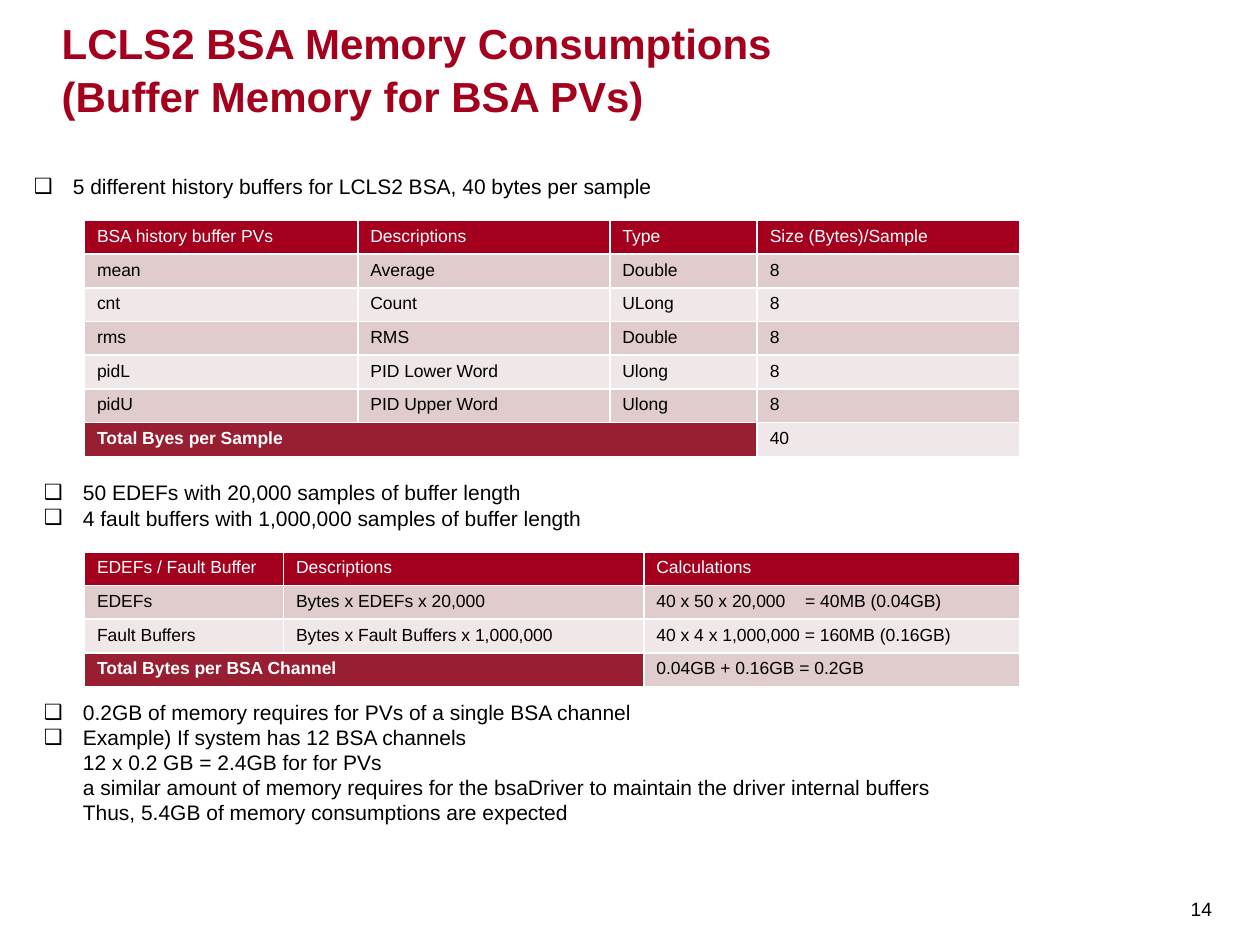
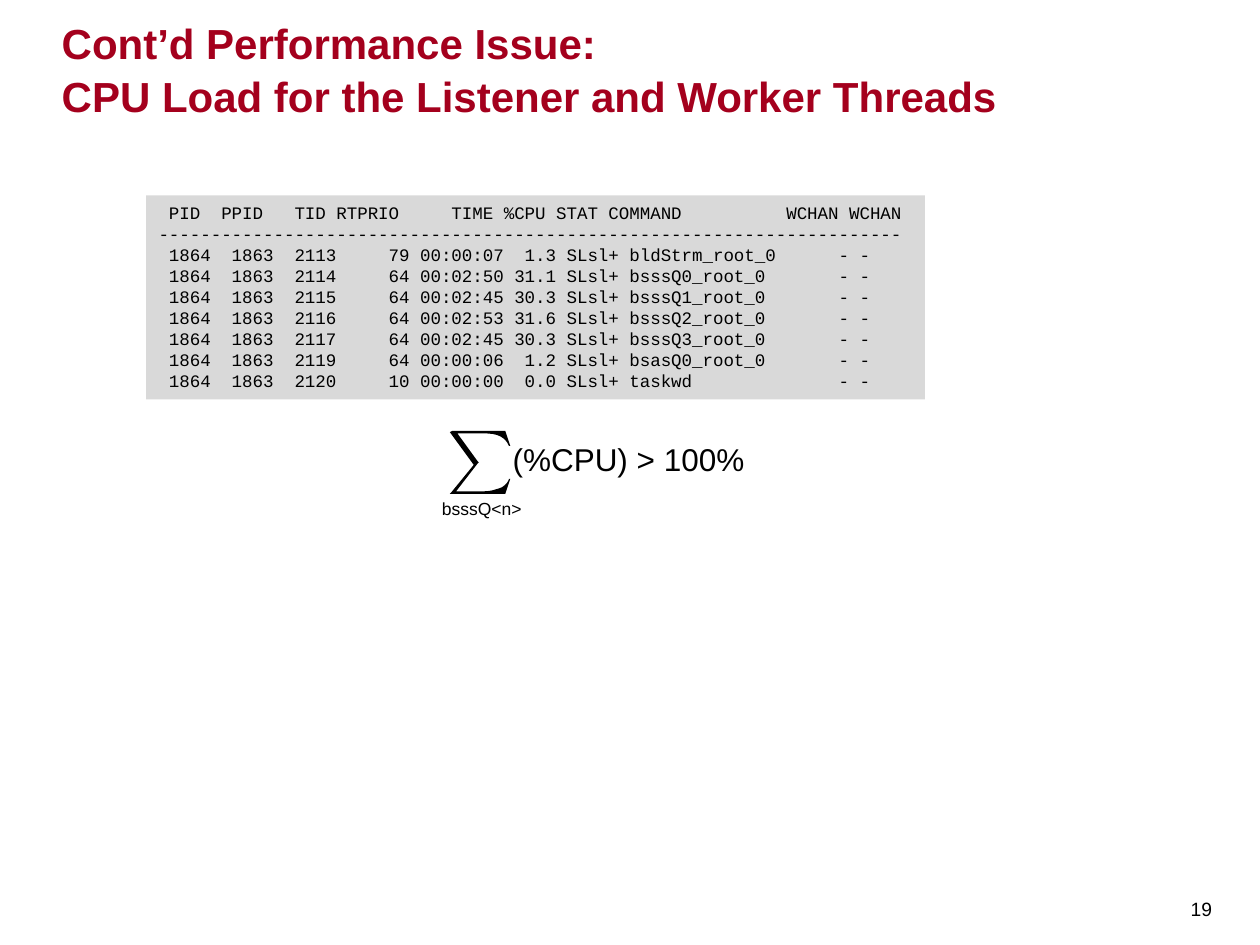
"""Build two slides on memory use and thread load."""
import dataclasses

import pptx
import pptx.dml.color
import pptx.enum.shapes
import pptx.enum.text
import pptx.oxml.ns
import pptx.util
from lxml import etree

Inches = pptx.util.Inches
Anchor = pptx.enum.text.MSO_ANCHOR
Fit = pptx.enum.text.MSO_AUTO_SIZE


@dataclasses.dataclass(frozen=True)
class Theme:
    """Colours, fonts and type sizes of the deck."""
    red: str = "A4001D"
    total: str = "981E32"
    bands: tuple = ("E0CCCD", "F0E7E8")
    gray: str = "D9D9D9"
    ink: str = "000000"
    white: str = "FFFFFF"
    sans: str = "Arial"
    mono: str = "Courier New"
    head: int = 24
    big: int = 18
    body: int = 12
    page: int = 11
    small: int = 10


LOOK = Theme()

PVS = [
    ["BSA history buffer PVs", "Descriptions", "Type", "Size (Bytes)/Sample"],
    ["mean", "Average", "Double", "8"],
    ["cnt", "Count", "ULong", "8"],
    ["rms", "RMS", "Double", "8"],
    ["pidL", "PID Lower Word", "Ulong", "8"],
    ["pidU", "PID Upper Word", "Ulong", "8"],
    ["Total Byes per Sample", "", "", "40"],
]
SUMS = [
    ["EDEFs / Fault Buffer", "Descriptions", "Calculations"],
    ["EDEFs", "Bytes x EDEFs x 20,000", "40 x 50 x 20,000\t= 40MB (0.04GB)"],
    ["Fault Buffers", "Bytes x Fault Buffers x 1,000,000",
     "40 x 4 x 1,000,000 = 160MB (0.16GB)"],
    ["Total Bytes per BSA Channel", "", "0.04GB + 0.16GB = 0.2GB"],
]
NOTES = [
    ((0.17, 1.33, 5.15, 0.3),
     ["5 different history buffers for LCLS2 BSA, 40 bytes per sample"]),
    ((0.25, 3.76, 4.51, 0.5),
     ["50 EDEFs with 20,000 samples of buffer length",
      "4 fault buffers with 1,000,000 samples of buffer length"]),
    ((0.25, 5.5, 7.3, 1.11),
     ["0.2GB of memory requires for PVs of a single BSA channel",
      "Example) If system has 12 BSA channels\n"
      "12 x 0.2 GB = 2.4GB for for PVs\n"
      "a similar amount of memory requires for the bsaDriver"
      " to maintain the driver internal buffers\n"
      "Thus, 5.4GB of memory consumptions are expected"]),
]
THREADS = [
    " PID  PPID   TID RTPRIO     TIME %CPU STAT COMMAND          WCHAN WCHAN",
    "-" * 71,
    " 1864  1863  2113     79 00:00:07  1.3 SLsl+ bldStrm_root_0      - -",
    " 1864  1863  2114     64 00:02:50 31.1 SLsl+ bsssQ0_root_0       - -",
    " 1864  1863  2115     64 00:02:45 30.3 SLsl+ bsssQ1_root_0       - -",
    " 1864  1863  2116     64 00:02:53 31.6 SLsl+ bsssQ2_root_0       - -",
    " 1864  1863  2117     64 00:02:45 30.3 SLsl+ bsssQ3_root_0       - -",
    " 1864  1863  2119     64 00:00:06  1.2 SLsl+ bsasQ0_root_0       - -",
    " 1864  1863  2120     10 00:00:00  0.0 SLsl+ taskwd              - -",
]


def color(code):
    """Turn a hex code into a colour."""
    return pptx.dml.color.RGBColor.from_string(code)


def place(box):
    """Turn a box in inches into lengths."""
    return [Inches(part) for part in box]


def node(parent, tag, **attrs):
    """Append a drawing element to its parent."""
    return etree.SubElement(parent, pptx.oxml.ns.qn(tag), attrs)


def style(para, size, ink=LOOK.ink, bold=False, face=LOOK.sans):
    """Set the font of a whole paragraph."""
    font = para.font
    font.name, font.size, font.bold = face, pptx.util.Pt(size), bold
    font.color.rgb = color(ink)


def bullet(para):
    """Give a paragraph a hanging box bullet."""
    props = para._p.get_or_add_pPr()
    indent = Inches(0.31)
    props.set("marL", str(indent))
    props.set("indent", str(-indent))
    node(props, "a:buFont", typeface=LOOK.sans)
    node(props, "a:buChar", char="❑")


def write(frame, lines, size, mark=False, face=LOOK.sans):
    """Fill a growing frame with lines that do not wrap."""
    frame.word_wrap = False
    frame.auto_size = Fit.SHAPE_TO_FIT_TEXT
    frame.vertical_anchor = Anchor.TOP
    for row, line in enumerate(lines):
        para = frame.add_paragraph() if row else frame.paragraphs[0]
        para.text = line
        para.alignment = pptx.enum.text.PP_ALIGN.LEFT
        if mark:
            bullet(para)
        style(para, size, face=face)


def label(slide, box, lines, size, mark=False):
    """Add a text box with lines."""
    frame = slide.shapes.add_textbox(*place(box)).text_frame
    write(frame, lines, size, mark)


def base(deck, title, page):
    """Add a slide with its title and page number."""
    slide = deck.slides.add_slide(deck.slide_layouts[6])
    frame = slide.shapes.add_textbox(*place((0.49, 0.14, 8.86, 0.82))).text_frame
    frame.word_wrap = True
    frame.vertical_anchor = Anchor.BOTTOM
    frame.margin_left = frame.margin_right = 0
    frame.margin_top = frame.margin_bottom = 0
    para = frame.paragraphs[0]
    para.text = title
    para.line_spacing = 1.05
    style(para, LOOK.head, LOOK.red, True)

    foot = slide.shapes.add_textbox(*place((9.37, 6.91, 0.35, 0.59))).text_frame
    foot.word_wrap = False
    foot.vertical_anchor = Anchor.MIDDLE
    foot.margin_left = foot.margin_right = Inches(0.08)
    foot.margin_top, foot.margin_bottom = Inches(0.06), Inches(0.05)
    foot.paragraphs[0].text = str(page)
    style(foot.paragraphs[0], LOOK.page)
    return slide


def paint(cell, text, fill, ink, bold):
    """Write one cell with its fill and white borders."""
    props = cell._tc.get_or_add_tcPr()
    for side in "LRTB":
        line = node(props, f"a:ln{side}", w=str(pptx.util.Pt(1)))
        node(node(line, "a:solidFill"), "a:srgbClr", val=LOOK.white)
    cell.fill.solid()
    cell.fill.fore_color.rgb = color(fill)
    para = cell.text_frame.paragraphs[0]
    para.text = text
    if "\t" in text:
        stops = node(para._p.get_or_add_pPr(), "a:tabLst")
        node(stops, "a:tab", pos=str(Inches(1.18)), algn="l")
    style(para, LOOK.small, ink, bold)


def grid(slide, box, rows, widths):
    """Add a banded table whose last row holds the total."""
    last = len(rows) - 1
    shape = slide.shapes.add_table(len(rows), len(widths), *place(box))
    table = shape.table
    for col, width in zip(table.columns, widths):
        col.width = Inches(width)
    for r, row in enumerate(rows):
        table.rows[r].height = Inches(box[3] / len(rows))
        for c, text in enumerate(row):
            total = r == last and c < len(row) - 1
            fill = LOOK.red if r == 0 else LOOK.bands[(r - 1) % 2]
            ink = LOOK.white if r == 0 or total else LOOK.ink
            paint(table.cell(r, c), text, LOOK.total if total else fill, ink, total)
    table.cell(last, 0).merge(table.cell(last, len(widths) - 2))


def fill(shape, code):
    """Give a shape a flat fill and no outline."""
    shape.shadow.inherit = False
    shape.fill.solid()
    shape.fill.fore_color.rgb = color(code)
    shape.line.fill.background()


def listing(slide, box, lines):
    """Add a gray panel of code."""
    kind = pptx.enum.shapes.MSO_SHAPE.RECTANGLE
    panel = slide.shapes.add_shape(kind, *place(box))
    fill(panel, LOOK.gray)
    write(panel.text_frame, lines, LOOK.small, face=LOOK.mono)


def curve(*knots, steps=8):
    """List points along a cubic curve."""
    points = []
    for step in range(steps + 1):
        t = step / steps
        mix = ((1 - t) ** 3, 3 * t * (1 - t) ** 2, 3 * t * t * (1 - t), t ** 3)
        points.append(tuple(sum(m * k[i] for m, k in zip(mix, knots))
                            for i in (0, 1)))
    return points


def sigma(slide, left, top):
    """Draw a summation sign."""
    points = [
        (0.19, 0.27), (0.01, 0.49), (0, 0.5), (0.44, 0.5), (0.48, 0.38),
        *curve((0.47, 0.38), (0.46, 0.42), (0.42, 0.45), (0.38, 0.46)),
        *curve((0.38, 0.46), (0.37, 0.46), (0.34, 0.48), (0.26, 0.48)),
        (0.05, 0.48), (0.22, 0.26), (0.23, 0.25), (0.22, 0.24), (0.06, 0.02),
        *curve((0.26, 0.02), (0.32, 0.02), (0.43, 0.02), (0.47, 0.12)),
        (0.48, 0.12), (0.44, 0), (0.02, 0), (0, 0.01),
    ]
    unit = 1000
    path = [(round(x * unit), round(y * unit)) for x, y in points]
    pen = slide.shapes.build_freeform(*path[0], scale=Inches(1) / unit)
    pen.add_line_segments(path[1:], close=True)
    fill(pen.convert_to_shape(Inches(left), Inches(top)), LOOK.ink)


def formula(slide, left, top):
    """Place the sum of the loads with its index below."""
    label(slide, (left + 0.56, top + 0.02, 2.06, 0.4), ["(%CPU) > 100%"], LOOK.big)
    sigma(slide, left + 0.16, top)
    label(slide, (left, top + 0.48, 0.84, 0.27), ["bsssQ<n>"], LOOK.small)


def memory(deck):
    """Build the slide on buffer memory."""
    slide = base(deck, "LCLS2 BSA Memory Consumptions\n(Buffer Memory for BSA PVs)", 14)
    for box, lines in NOTES:
        label(slide, box, lines, LOOK.body, True)
    grid(slide, (0.67, 1.75, 7.42, 1.87), PVS, (2.17, 2, 1.17, 2.08))
    grid(slide, (0.67, 4.38, 7.42, 1.07), SUMS, (1.58, 2.86, 2.98))


def load(deck):
    """Build the slide on thread load."""
    slide = base(deck, "Cont’d Performance Issue:\n"
                 "CPU Load for the Listener and Worker Threads", 19)
    listing(slide, (1.16, 1.55, 6.18, 1.62), THREADS)
    formula(slide, 3.41, 3.42)


def main():
    """Build and save the deck."""
    deck = pptx.Presentation()
    deck.slide_width, deck.slide_height = Inches(10), Inches(7.5)
    memory(deck)
    load(deck)
    deck.save("out.pptx")


if __name__ == "__main__":
    main()
